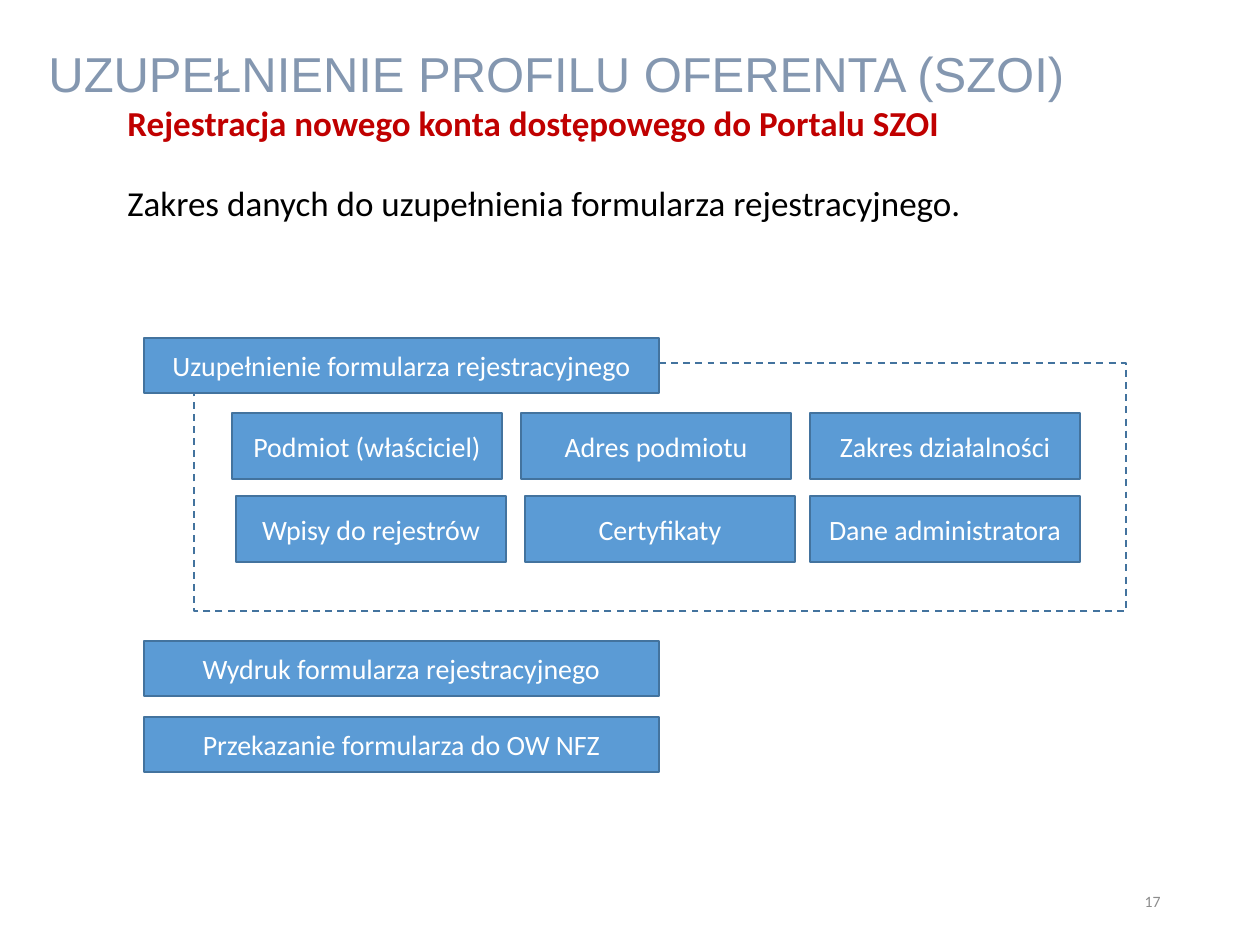
import pptx
import pptx.dml.color
import pptx.enum.dml
import pptx.enum.shapes
import pptx.enum.text
import pptx.util

RGBColor = pptx.dml.color.RGBColor
Align = pptx.enum.text.PP_ALIGN
Anchor = pptx.enum.text.MSO_ANCHOR

PX_PER_INCH = 126
BLUE = RGBColor(0x5B, 0x9B, 0xD5)
BORDER = RGBColor(0x43, 0x73, 0x9E)
TITLE = RGBColor(0x84, 0x97, 0xB0)
RED = RGBColor(0xC0, 0x00, 0x00)
BLACK = RGBColor(0x00, 0x00, 0x00)
GREY = RGBColor(0x8C, 0x8C, 0x8C)
WHITE = RGBColor(0xFF, 0xFF, 0xFF)

STEP_LEFT, STEP_WIDTH, STEP_HEIGHT = 144, 515, 55
STEPS = [
    (338, "Uzupełnienie formularza rejestracyjnego"),
    (641, "Wydruk formularza rejestracyjnego"),
    (717, "Przekazanie formularza do OW NFZ"),
]

SECTION_WIDTH, SECTION_HEIGHT = 270, 66
SECTION_ROWS = [
    (413, (232, 521, 810),
     ("Podmiot (właściciel)", "Adres podmiotu", "Zakres działalności")),
    (496, (236, 525, 810),
     ("Wpisy do rejestrów", "Certyfikaty", "Dane administratora")),
]


def px(length):
    return pptx.util.Emu(round(length * 914400 / PX_PER_INCH))


def write_text(box, text, *, size, color, font="Calibri", bold=False,
               align=Align.LEFT, anchor=Anchor.TOP, wrap=True):
    frame = box.text_frame
    frame.word_wrap = wrap
    frame.vertical_anchor = anchor
    para = frame.paragraphs[0]
    para.alignment = align
    span = para.add_run()
    span.text = text
    span.font.name = font
    span.font.size = pptx.util.Pt(size)
    span.font.bold = bold
    span.font.color.rgb = color


def add_text(page, bounds, text, **text_format):
    box = page.shapes.add_textbox(*map(px, bounds))
    write_text(box, text, **text_format)


def add_rectangle(page, bounds):
    """Add an outlined rectangle without fill."""
    box = page.shapes.add_shape(
        pptx.enum.shapes.MSO_SHAPE.RECTANGLE, *map(px, bounds))
    box.shadow.inherit = False
    box.fill.background()
    box.line.color.rgb = BORDER
    box.line.width = pptx.util.Pt(1)
    return box


def add_label_box(page, bounds, text):
    box = add_rectangle(page, bounds)
    box.fill.solid()
    box.fill.fore_color.rgb = BLUE
    write_text(box, text, size=16, color=WHITE,
               align=Align.CENTER, anchor=Anchor.MIDDLE)


def main():
    deck = pptx.Presentation()
    deck.slide_width = px(1260)
    deck.slide_height = px(945)
    page = deck.slides.add_slide(deck.slide_layouts[6])

    form_frame = add_rectangle(page, (194, 363, 932, 248))
    form_frame.line.dash_style = pptx.enum.dml.MSO_LINE.DASH

    add_text(page, (890, 876, 283, 50), "17", size=9, color=GREY,
             align=Align.RIGHT, anchor=Anchor.MIDDLE)
    add_text(page, (115, 175, 1062, 55),
             "Zakres danych do uzupełnienia formularza rejestracyjnego.",
             size=20, color=BLACK)
    add_text(page, (36, 37, 1066, 72), "UZUPEŁNIENIE PROFILU OFERENTA (SZOI)",
             size=28, color=TITLE, font="Arial", wrap=False)
    add_text(page, (115, 95, 1062, 55),
             "Rejestracja nowego konta dostępowego do Portalu SZOI",
             size=20, color=RED, bold=True)

    for top, text in STEPS:
        add_label_box(page, (STEP_LEFT, top, STEP_WIDTH, STEP_HEIGHT), text)
    for top, lefts, labels in SECTION_ROWS:
        for left, text in zip(lefts, labels):
            add_label_box(
                page, (left, top, SECTION_WIDTH, SECTION_HEIGHT), text)

    deck.save("out.pptx")


if __name__ == "__main__":
    main()
